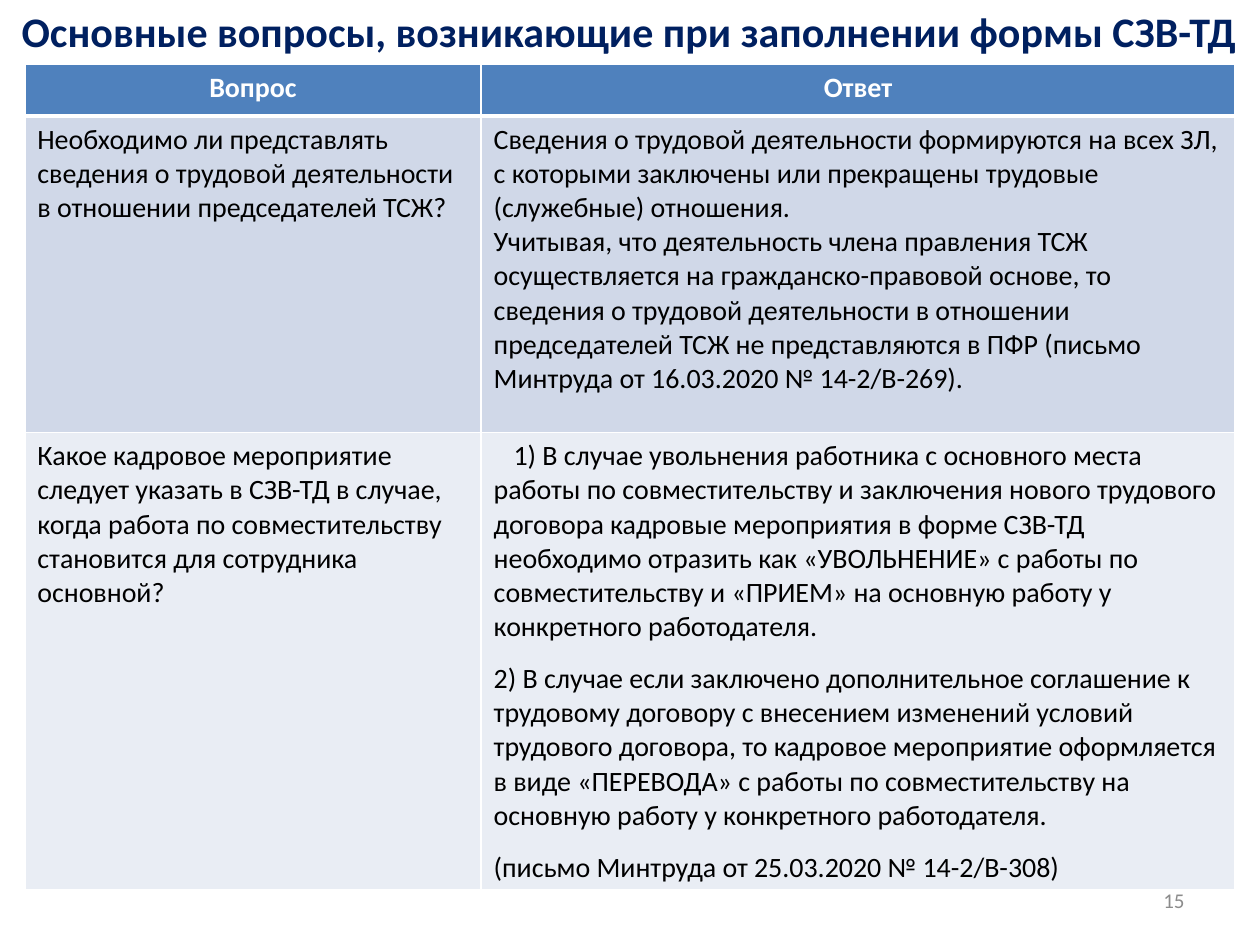
from dataclasses import dataclass

from lxml import etree
from pptx import Presentation
from pptx.dml.color import RGBColor
from pptx.enum.text import MSO_ANCHOR, PP_ALIGN
from pptx.oxml.ns import qn
from pptx.util import Cm, Pt

LEFT, CENTER, RIGHT = PP_ALIGN.LEFT, PP_ALIGN.CENTER, PP_ALIGN.RIGHT
MIDDLE = MSO_ANCHOR.MIDDLE


@dataclass(frozen=True)
class Theme:
    font: str = "Calibri"
    title: str = "002060"
    head: str = "4F81BD"
    bands: tuple = ("D0D8E8", "E9EDF4")
    ink: str = "000000"
    white: str = "FFFFFF"
    grey: str = "8C8C8C"
    big: int = 24
    body: int = 16
    small: int = 12
    thin: int = 1
    thick: int = 3


THEME = Theme()

TITLE = "Основные вопросы, возникающие при заполнении формы СЗВ-ТД"
HEADS = ("Вопрос", "Ответ")
# Each row: question, answer paragraphs, space after (pt), first-line indent (cm)
ROWS = (
    (
        "Необходимо ли представлять сведения о трудовой деятельности "
        "в отношении председателей ТСЖ?",
        (
            "Сведения о трудовой деятельности формируются на всех ЗЛ, с которыми "
            "заключены или прекращены трудовые (служебные) отношения.",
            "Учитывая, что деятельность члена правления ТСЖ осуществляется на "
            "гражданско-правовой основе, то сведения о трудовой деятельности в "
            "отношении председателей ТСЖ не представляются в ПФР (письмо "
            "Минтруда от 16.03.2020 № 14-2/В-269).",
        ),
        0, 0,
    ),
    (
        "Какое кадровое мероприятие следует указать в СЗВ-ТД в случае, когда "
        "работа по совместительству становится для сотрудника основной?",
        (
            "1) В случае увольнения работника с основного места работы по "
            "совместительству и заключения нового трудового договора кадровые "
            "мероприятия в форме СЗВ-ТД необходимо отразить как «УВОЛЬНЕНИЕ» с "
            "работы по совместительству и «ПРИЕМ» на основную работу у "
            "конкретного работодателя.",
            "2) В случае если заключено дополнительное соглашение к трудовому "
            "договору с внесением изменений условий трудового договора, то "
            "кадровое мероприятие оформляется в виде «ПЕРЕВОДА» с работы по "
            "совместительству на основную работу у конкретного работодателя.",
            "(письмо Минтруда от 25.03.2020 № 14-2/В-308)",
        ),
        10, 0.4,
    ),
)


def write(frame, texts, size, color, align=LEFT, bold=False, after=0, indent=0):
    """Fill a text frame; indent applies to the first paragraph's first line."""
    for i, text in enumerate(texts):
        para = frame.add_paragraph() if i else frame.paragraphs[0]
        para.alignment = align
        para.space_after = Pt(after)
        if indent and i == 0:
            para._p.get_or_add_pPr().set("indent", str(Cm(indent)))
        run = para.add_run()
        run.text = text
        font = run.font
        font.name, font.size, font.bold = THEME.font, Pt(size), bold
        font.color.rgb = RGBColor.from_string(color)


def edge(cell, top=0, bottom=0, side=0):
    """Set white borders by width in points; zero means no line."""
    props = cell._tc.get_or_add_tcPr()
    widths = {"L": side, "R": side, "T": top, "B": bottom}
    for i, (key, width) in enumerate(widths.items()):
        line = etree.Element(qn(f"a:ln{key}"), w=str(Pt(width)))
        if width:
            fill = etree.SubElement(line, qn("a:solidFill"))
            etree.SubElement(fill, qn("a:srgbClr"), val=THEME.white)
        else:
            etree.SubElement(line, qn("a:noFill"))
        props.insert(i, line)


def paint(cell, color):
    cell.fill.solid()
    cell.fill.fore_color.rgb = RGBColor.from_string(color)


def add_grid(slide, left, top, cols, rows):
    """Add a table without banding, from column widths and row heights in cm."""
    grid = slide.shapes.add_table(
        len(rows), len(cols), Cm(left), Cm(top), Cm(sum(cols)), Cm(sum(rows))
    ).table
    grid.first_row = grid.horz_banding = False
    for col, width in zip(grid.columns, cols):
        col.width = Cm(width)
    for row, height in zip(grid.rows, rows):
        row.height = Cm(height)
    return grid


def add_answers(slide):
    grid = add_grid(slide, 0.5, 1.3, (9.2, 15.2), (1.04, 6.38, 9.22))
    thin, thick = THEME.thin, THEME.thick
    for col, text in enumerate(HEADS):
        cell = grid.cell(0, col)
        write(cell.text_frame, (text,), THEME.body, THEME.white, CENTER, True)
        paint(cell, THEME.head)
        edge(cell, thin, thick, thin)
    for row, (ask, reply, after, indent) in enumerate(ROWS, 1):
        left, right = grid.cell(row, 0), grid.cell(row, 1)
        write(left.text_frame, (ask,), THEME.body, THEME.ink)
        write(right.text_frame, reply, THEME.body, THEME.ink,
              after=after, indent=indent)
        for cell in (left, right):
            paint(cell, THEME.bands[row - 1])
            edge(cell, thick if row == 1 else thin, thin, thin)


def add_title(slide):
    cell = add_grid(slide, 0.13, 0.03, (25.1,), (1.8,)).cell(0, 0)
    write(cell.text_frame, (TITLE,), THEME.big, THEME.title, CENTER, True)
    cell.fill.background()
    edge(cell)


def add_number(slide, text):
    box = slide.shapes.add_textbox(Cm(18.2), Cm(17.65), Cm(5.93), Cm(1.01))
    frame = box.text_frame
    frame.word_wrap = True
    frame.vertical_anchor = MIDDLE
    write(frame, (text,), THEME.small, THEME.grey, RIGHT)


def main():
    deck = Presentation()
    deck.slide_width, deck.slide_height = Cm(25.4), Cm(19.05)
    slide = deck.slides.add_slide(deck.slide_layouts[6])
    add_number(slide, "15")
    add_answers(slide)
    add_title(slide)
    deck.save("out.pptx")


if __name__ == "__main__":
    main()
